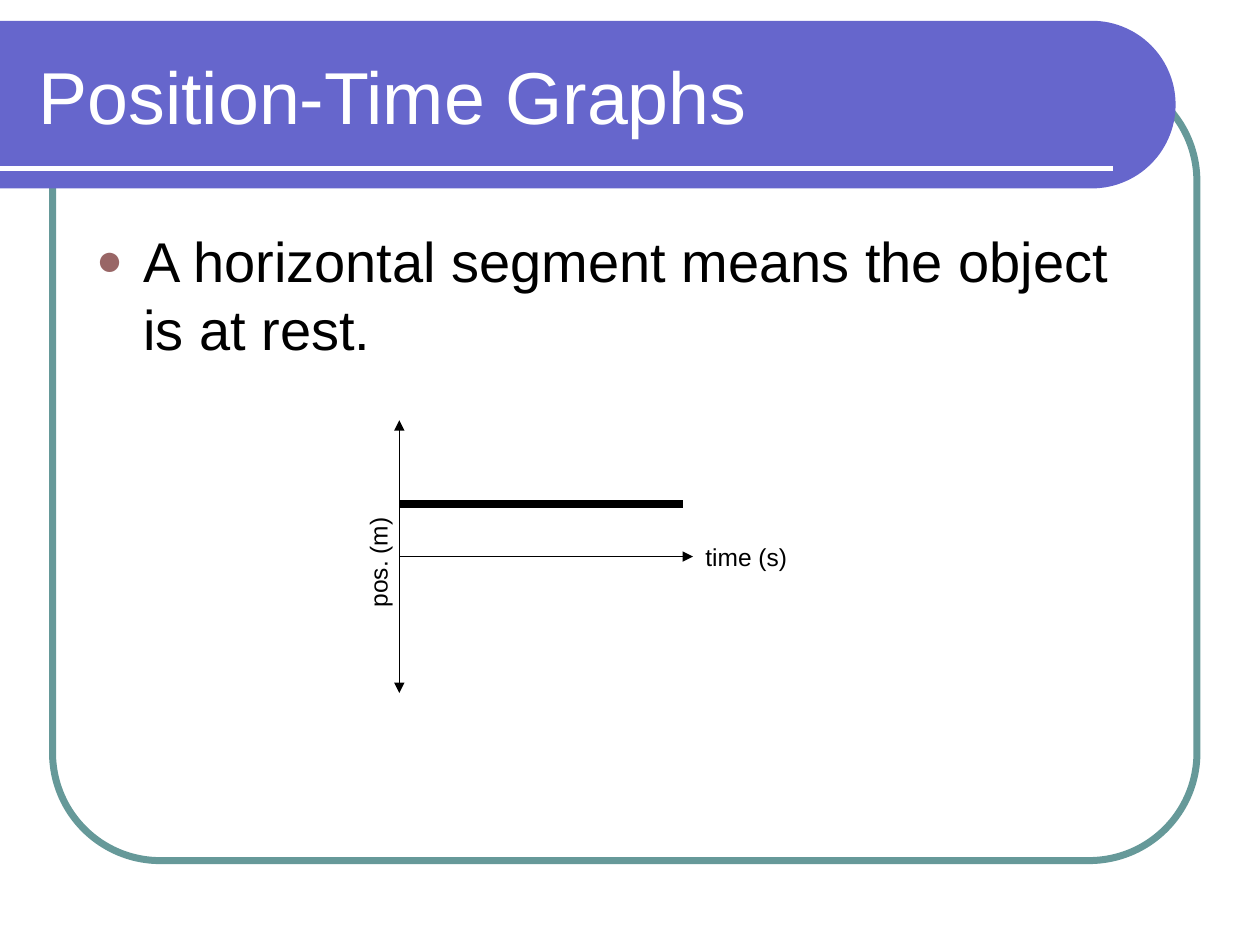
import math
from dataclasses import dataclass

from lxml import etree
from pptx import Presentation
from pptx.dml.color import RGBColor
from pptx.enum import shapes, text
from pptx.oxml import ns
from pptx.util import Cm, Pt


@dataclass(frozen=True)
class Theme:
    font: str = "Arial"
    banner: str = "6666CC"
    frame: str = "669999"
    bullet: str = "996666"
    ink: str = "000000"
    paper: str = "FFFFFF"
    title_size: float = 42
    body_size: float = 32
    label_size: float = 14


THEME = Theme()

TITLE = "Position-Time Graphs"
BULLETS = ["A horizontal segment means the object is at rest."]

ORIGIN_X, ORIGIN_Y = 8.05, 11.22
AXIS_HALF_HEIGHT = 2.75
AXIS_LENGTH = 5.92
SEGMENT_LENGTH = 5.72
SEGMENT_RISE = 1.06
LABEL_WIDTH, LABEL_HEIGHT = 2.34, 0.85

AXES = [
    ((ORIGIN_X, ORIGIN_Y - AXIS_HALF_HEIGHT),
     (ORIGIN_X, ORIGIN_Y + AXIS_HALF_HEIGHT), ("headEnd", "tailEnd")),
    ((ORIGIN_X, ORIGIN_Y), (ORIGIN_X + AXIS_LENGTH, ORIGIN_Y), ("tailEnd",)),
]
AXIS_LABELS = [
    ("time (s)", ORIGIN_X + AXIS_LENGTH, 10.8, 0),
    ("pos. (m)", 6.45, 10.9, 270),
]


def add_element(parent, tag, **attributes):
    return etree.SubElement(parent, ns.qn(tag), **attributes)


def color(value):
    return RGBColor.from_string(value)


def add_line(slide, start, end, line_color, width, arrows=()):
    line = slide.shapes.add_connector(
        shapes.MSO_CONNECTOR.STRAIGHT, *map(Cm, (*start, *end)))
    line.line.color.rgb = color(line_color)
    line.line.width = Pt(width)
    for arrow in arrows:
        add_element(line.line._ln, f"a:{arrow}", type="triangle")
    add_element(line._element.spPr, "a:effectLst")


def add_text(slide, box, paragraphs, size, text_color,
             anchor=text.MSO_ANCHOR.TOP, rotation=0, bulleted=False):
    shape = slide.shapes.add_textbox(*map(Cm, box))
    shape.rotation = rotation
    frame = shape.text_frame
    frame.word_wrap = True
    frame.vertical_anchor = anchor
    frame.text = "\n".join(paragraphs)
    for paragraph in frame.paragraphs:
        if bulleted:
            add_bullet(paragraph)
        for run in paragraph.runs:
            run.font.name = THEME.font
            run.font.size = Pt(size)
            run.font.color.rgb = color(text_color)


def add_bullet(paragraph):
    properties = paragraph._p.get_or_add_pPr()
    indent = Cm(0.95)
    properties.set("marL", str(indent))
    properties.set("indent", str(-indent))
    bullet_color = add_element(properties, "a:buClr")
    add_element(bullet_color, "a:srgbClr", val=THEME.bullet)
    add_element(properties, "a:buSzPct", val="80000")
    add_element(properties, "a:buFont", typeface=THEME.font)
    add_element(properties, "a:buChar", char="●")


def add_frame(slide):
    frame = slide.shapes.add_shape(
        shapes.MSO_SHAPE.ROUNDED_RECTANGLE,
        Cm(1.06), Cm(1.48), Cm(23.07), Cm(15.87))
    frame.adjustments[0] = 0.137
    frame.shadow.inherit = False
    frame.fill.background()
    frame.line.color.rgb = color(THEME.frame)
    frame.line.width = Pt(4)


def add_banner(slide):
    top, radius, center_x, steps = 0.42, 1.69, 22.01, 60
    angles = [math.pi * (step / steps - 0.5) for step in range(steps + 1)]
    arc = [(Cm(center_x + radius * math.cos(angle)),
            Cm(top + radius + radius * math.sin(angle))) for angle in angles]
    builder = slide.shapes.build_freeform(Cm(0), Cm(top))
    builder.add_line_segments([*arc, (Cm(0), Cm(top + 2 * radius))], close=True)
    banner = builder.convert_to_shape()
    banner.shadow.inherit = False
    banner.fill.solid()
    banner.fill.fore_color.rgb = color(THEME.banner)
    banner.line.fill.background()
    add_line(slide, (0, 3.39), (22.44, 3.39), THEME.paper, 3)


def add_graph(slide):
    for start, end, arrows in AXES:
        add_line(slide, start, end, THEME.ink, 0.75, arrows)
    for label, left, top, rotation in AXIS_LABELS:
        add_text(slide, (left, top, LABEL_WIDTH, LABEL_HEIGHT), [label],
                 THEME.label_size, THEME.ink, rotation=rotation)
    segment_y = ORIGIN_Y - SEGMENT_RISE
    add_line(slide, (ORIGIN_X, segment_y),
             (ORIGIN_X + SEGMENT_LENGTH, segment_y), THEME.ink, 4.5)


def main():
    presentation = Presentation()
    presentation.slide_width, presentation.slide_height = Cm(25.4), Cm(19.05)
    slide = presentation.slides.add_slide(presentation.slide_layouts[6])
    add_frame(slide)
    add_banner(slide)
    add_text(slide, (0.53, 0.64, 22.28, 2.54), [TITLE], THEME.title_size,
             THEME.paper, anchor=text.MSO_ANCHOR.MIDDLE)
    add_text(slide, (1.69, 4.45, 22.01, 12.28), BULLETS, THEME.body_size,
             THEME.ink, bulleted=True)
    add_graph(slide)
    presentation.save("out.pptx")


if __name__ == "__main__":
    main()
